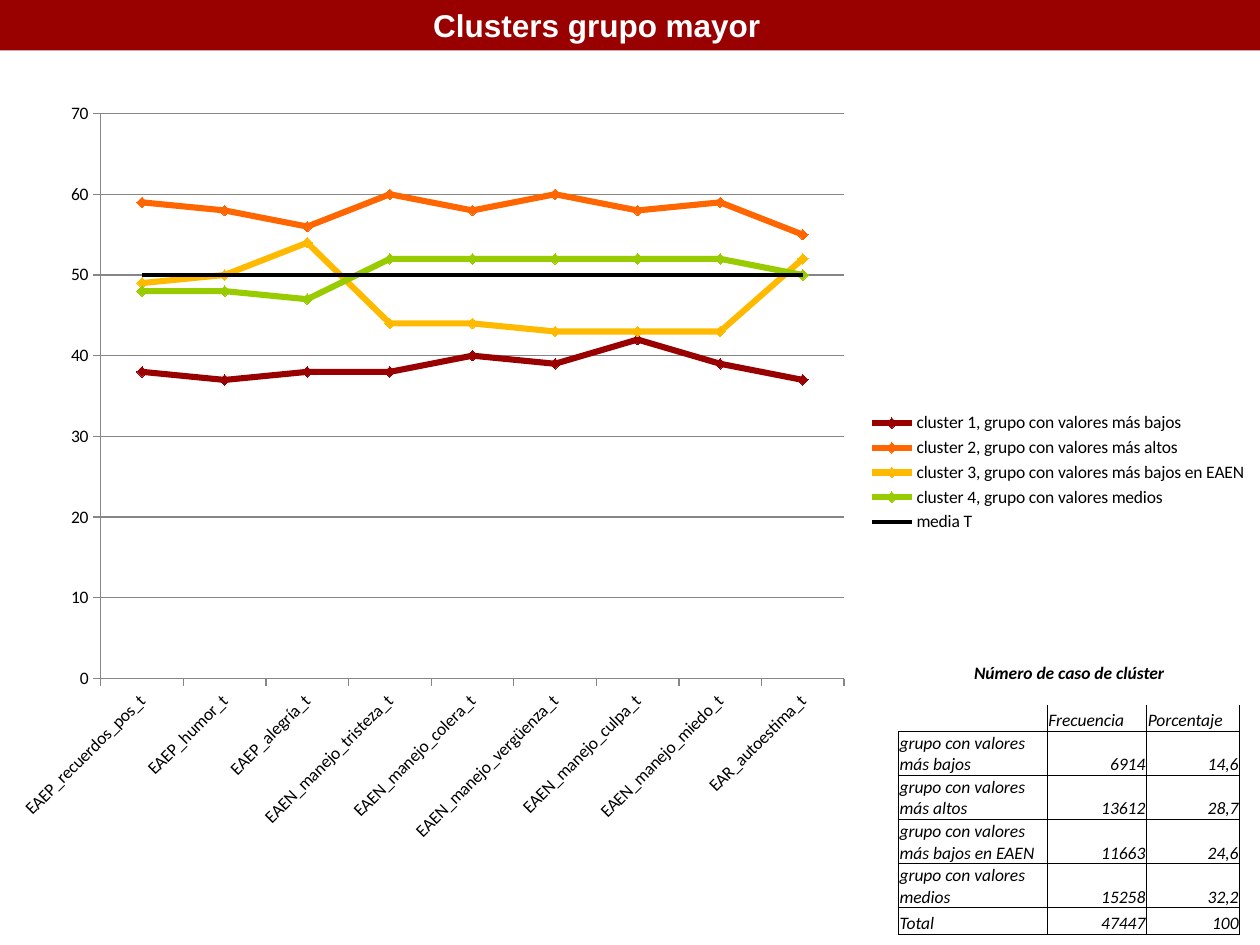
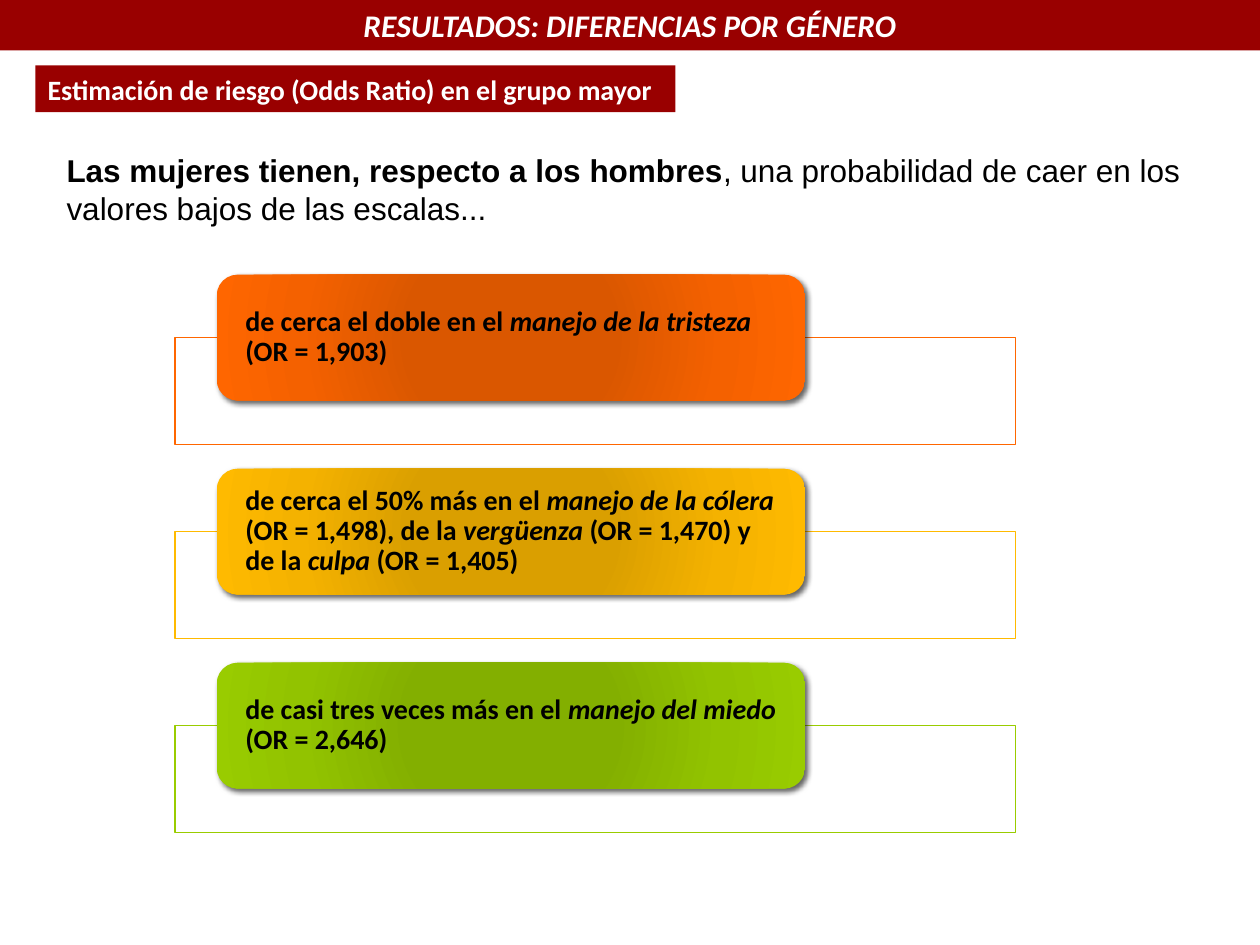
from dataclasses import dataclass
from lxml.etree import SubElement
from pptx import Presentation
from pptx.chart.data import CategoryChartData
from pptx.dml.color import RGBColor
from pptx.enum.chart import XL_CHART_TYPE, XL_LEGEND_POSITION, XL_MARKER_STYLE, XL_TICK_MARK
from pptx.enum.shapes import MSO_SHAPE
from pptx.enum.text import MSO_ANCHOR, PP_ALIGN
from pptx.oxml import parse_xml
from pptx.oxml.ns import nsdecls, qn
from pptx.util import Inches, Pt


@dataclass(frozen=True)
class Theme:
    red: str = "990000"
    orange: str = "FF6600"
    amber: str = "FFBA00"
    green: str = "99CC00"
    black: str = "000000"
    white: str = "FFFFFF"
    grey: str = "868686"
    body: str = "Calibri"
    heading: str = "Arial"
    title_size: int = 18
    card_size: int = 16
    small_size: int = 10


THEME = Theme()
COLUMNS = 100  # the grid has 100 columns and 75 rows of square cells

CATEGORIES = ["EAEP_recuerdos_pos_t", "EAEP_humor_t", "EAEP_alegría_t",
              "EAEN_manejo_tristeza_t", "EAEN_manejo_colera_t",
              "EAEN_manejo_vergüenza_t", "EAEN_manejo_culpa_t",
              "EAEN_manejo_miedo_t", "EAR_autoestima_t"]
CLUSTERS = [
    ("cluster 1, grupo con valores más bajos", THEME.red,
     [38, 37, 38, 38, 40, 39, 42, 39, 37]),
    ("cluster 2, grupo con valores más altos", THEME.orange,
     [59, 58, 56, 60, 58, 60, 58, 59, 55]),
    ("cluster 3, grupo con valores más bajos en EAEN", THEME.amber,
     [49, 50, 54, 44, 44, 43, 43, 43, 52]),
    ("cluster 4, grupo con valores medios", THEME.green,
     [48, 48, 47, 52, 52, 52, 52, 52, 50]),
]
MEAN = ("media T", THEME.black, [50] * len(CATEGORIES))

FREQUENCIES = [
    ("Número de caso de clúster", "", ""),
    ("", "Frecuencia", "Porcentaje"),
    ("grupo con valores más bajos", "6914", "14,6"),
    ("grupo con valores más altos", "13612", "28,7"),
    ("grupo con valores más bajos en EAEN", "11663", "24,6"),
    ("grupo con valores medios", "15258", "32,2"),
    ("Total", "47447", "100"),
]

# Each card: colour, its two darker shades, text runs as (text, italic)
CARDS = [
    (THEME.orange, "DA5700", "F46100", [
        ("de cerca el doble en el ", False), ("manejo de la tristeza ", True),
        ("(OR = 1,903)", False)]),
    (THEME.amber, "DA9F00", "F4B200", [
        ("de cerca el 50% más en el ", False), ("manejo de la cólera ", True),
        ("(OR = 1,498), de la ", False), ("vergüenza", True),
        (" (OR = 1,470) y de la ", False), ("culpa", True),
        (" (OR = 1,405)", False)]),
    (THEME.green, "83AF00", "92C300", [
        ("de casi tres veces más en el ", False), ("manejo del miedo ", True),
        ("(OR = 2,646)", False)]),
]


def rgb(colour):
    return RGBColor.from_string(colour)


class Deck:
    """Holds the style and the current slide, and draws each kind of element."""

    def __init__(self, theme):
        self.theme = theme
        self.presentation = Presentation()
        self.presentation.slide_width = Inches(10)
        self.presentation.slide_height = Inches(7.5)
        self.cell = self.presentation.slide_width / COLUMNS
        self.slide = None

    def grid(self, *cells):
        return [round(count * self.cell) for count in cells]

    def style_font(self, font, size, colour, face=None, bold=False, italic=False):
        font.size, font.name = Pt(size), face or self.theme.body
        font.bold, font.italic = bold, italic
        font.color.rgb = rgb(colour)

    def add_runs(self, frame, runs, size, colour, face=None, align=PP_ALIGN.LEFT):
        """Fill a text frame from runs of (text, bold, italic)."""
        paragraph = frame.paragraphs[0]
        paragraph.alignment = align
        for text, bold, italic in runs:
            run = paragraph.add_run()
            run.text = text
            self.style_font(run.font, size, colour, face, bold, italic)
        return paragraph

    def new_slide(self):
        self.slide = self.presentation.slides.add_slide(self.presentation.slide_layouts[6])
        self.box(0, 0, COLUMNS, 4, fill=self.theme.red)

    def box(self, left, top, width, height, fill, line=None, kind=MSO_SHAPE.RECTANGLE):
        shape = self.slide.shapes.add_shape(kind, *self.grid(left, top, width, height))
        shape.shadow.inherit = False
        shape.fill.solid()
        shape.fill.fore_color.rgb = rgb(fill)
        if line:
            shape.line.color.rgb = rgb(line)
            shape.line.width = Pt(0.75)
        else:
            shape.line.fill.background()
        return shape

    def text(self, left, top, width, height, runs, colour, face=None, align=PP_ALIGN.LEFT):
        box = self.slide.shapes.add_textbox(*self.grid(left, top, width, height))
        box.text_frame.word_wrap = True
        self.add_runs(box.text_frame, runs, self.theme.title_size, colour, face, align)

    def title(self, left, width, runs, face=None, align=PP_ALIGN.LEFT):
        self.text(left, 0, width, 4, runs, self.theme.white, face, align)

    def label(self, left, top, width, height, text):
        shape = self.box(left, top, width, height, self.theme.red)
        self.add_runs(shape.text_frame, [(text, True, False)],
                      self.theme.card_size, self.theme.white)

    def card(self, left, top, width, height, colour, dark, middle, runs):
        shape = self.box(left, top, width, height, colour, kind=MSO_SHAPE.ROUNDED_RECTANGLE)
        properties = shape._element.spPr
        # Round gradient from the dark centre to the plain colour
        stops = "".join(
            f'<a:gs pos="{share * 1000}"><a:srgbClr val="{shade}"/></a:gs>'
            for share, shade in [(0, dark), (34, dark), (70, middle), (100, colour)])
        gradient = parse_xml(
            f'<a:gradFill {nsdecls("a")} rotWithShape="1"><a:gsLst>{stops}</a:gsLst>'
            '<a:path path="circle"><a:fillToRect l="100000" t="100000" r="100000" b="100000"/>'
            '</a:path></a:gradFill>')
        properties.replace(properties.find(qn("a:solidFill")), gradient)
        # Soft shadow to the lower right
        properties.find(qn("a:effectLst")).append(parse_xml(
            f'<a:outerShdw {nsdecls("a")} blurRad="{Pt(3)}" dist="{Pt(2)}" dir="2700000" '
            'algn="tl" rotWithShape="0"><a:srgbClr val="000000"><a:alpha val="60000"/>'
            '</a:srgbClr></a:outerShdw>'))
        frame = shape.text_frame
        frame.word_wrap = True
        frame.vertical_anchor = MSO_ANCHOR.MIDDLE
        frame.margin_left = frame.margin_right = Inches(0.18)
        frame.margin_top = frame.margin_bottom = 0
        paragraph = self.add_runs(frame, [(text, True, italic) for text, italic in runs],
                                  self.theme.card_size, self.theme.black)
        paragraph.line_spacing = 0.9

    def line_chart(self, left, top, width, height, categories, clusters, mean):
        data = CategoryChartData()
        data.categories = categories
        for name, _, values in [*clusters, mean]:
            data.add_series(name, values)
        chart = self.slide.shapes.add_chart(
            XL_CHART_TYPE.LINE_MARKERS, *self.grid(left, top, width, height), data).chart
        self.style_font(chart.font, self.theme.small_size, self.theme.black)
        chart.has_title = False
        chart.has_legend = True
        chart.legend.position = XL_LEGEND_POSITION.RIGHT
        chart.legend.include_in_layout = False
        # Axes
        scale = chart.value_axis
        scale.minimum_scale, scale.maximum_scale, scale.major_unit = 0, 70, 10
        scale.has_major_gridlines = True
        for axis in (scale, chart.category_axis):
            axis.major_tick_mark = XL_TICK_MARK.OUTSIDE
            self.style_font(axis.tick_labels.font, self.theme.small_size, self.theme.black)
        for line in (scale.format.line, scale.major_gridlines.format.line,
                     chart.category_axis.format.line):
            line.color.rgb = rgb(self.theme.grey)
            line.width = Pt(0.75)
        chart.category_axis._element.find(qn("c:txPr")).find(qn("a:bodyPr")).set("rot", "-2700000")
        # Lines and markers
        for series, (name, colour, _) in zip(chart.plots[0].series, [*clusters, mean]):
            series.smooth = False
            series.format.line.color.rgb = rgb(colour)
            if name == mean[0]:
                series.format.line.width = Pt(2.25)
                series.marker.style = XL_MARKER_STYLE.NONE
                continue
            series.format.line.width = Pt(3.5)
            series.marker.style, series.marker.size = XL_MARKER_STYLE.DIAMOND, 6
            series.marker.format.fill.solid()
            series.marker.format.fill.fore_color.rgb = rgb(colour)
            series.marker.format.line.color.rgb = rgb(colour)
        # Plot area as shares of the chart
        area = chart._chartSpace.chart.plotArea
        for layout in area.findall(qn("c:layout")):
            area.remove(layout)
        shares = "".join(f'<c:{key} val="{value}"/>' for key, value in [
            ("layoutTarget", "inner"), ("xMode", "edge"), ("yMode", "edge"),
            ("x", 0.08), ("y", 0.03), ("w", 0.59), ("h", 0.74)])
        area.insert(0, parse_xml(
            f'<c:layout {nsdecls("c")}><c:manualLayout>{shares}</c:manualLayout></c:layout>'))

    def borders(self, cell, sides):
        properties = cell._tc.get_or_add_tcPr()
        for position, side in enumerate("LRTB"):
            paint = (f'<a:solidFill><a:srgbClr val="{self.theme.black}"/></a:solidFill>'
                     if side in sides else "<a:noFill/>")
            properties.insert(position, parse_xml(
                f'<a:ln{side} {nsdecls("a")} w="{Pt(0.5)}">{paint}</a:ln{side}>'))

    def table(self, left, top, widths, heights, rows):
        table = self.slide.shapes.add_table(
            len(rows), len(widths),
            *self.grid(left, top, sum(widths), sum(heights))).table
        table.first_row = table.horz_banding = False
        for column, width in zip(table.columns, self.grid(*widths)):
            column.width = width
        for row, height in zip(table.rows, self.grid(*heights)):
            row.height = height
        table.cell(0, 0).merge(table.cell(0, len(widths) - 1))
        for row_index, row in enumerate(rows):
            for column_index, text in enumerate(row):
                cell = table.cell(row_index, column_index)
                caption = row_index == 0
                cell.margin_left = cell.margin_right = cell.margin_top = Inches(0.01)
                cell.margin_bottom = 0
                cell.vertical_anchor = MSO_ANCHOR.TOP if caption else MSO_ANCHOR.BOTTOM
                cell.fill.background()
                if caption:
                    align, sides = PP_ALIGN.CENTER, ""
                elif row_index == 1:
                    align, sides = PP_ALIGN.LEFT, "LRB" if column_index else "RB"
                else:
                    align, sides = PP_ALIGN.RIGHT if column_index else PP_ALIGN.LEFT, "LRTB"
                self.borders(cell, sides)
                if text:
                    self.add_runs(cell.text_frame, [(text, caption, True)],
                                  self.theme.small_size, self.theme.black, align=align)
                else:
                    # An empty cell keeps the small type, so its row stays low
                    SubElement(cell.text_frame.paragraphs[0]._p, qn("a:endParaRPr"),
                               sz=str(self.theme.small_size * 100))


def build_clusters(deck):
    deck.new_slide()
    deck.line_chart(0, 7.2, COLUMNS, 60.6, CATEGORIES, CLUSTERS, MEAN)
    deck.table(71.3, 52.5, [11.8, 7.9, 7.4], [3.45, 2.1] + [3.5] * 4 + [2.1], FREQUENCIES)
    deck.title(33.4, 28.3, [("Clusters grupo mayor", True, False)], deck.theme.heading)


def build_gender(deck):
    deck.new_slide()
    deck.title(0, COLUMNS, [("RESULTADOS: DIFERENCIAS POR GÉNERO", True, True)],
               align=PP_ALIGN.CENTER)
    deck.label(2.8, 5.2, 50.8, 3.7, "Estimación de riesgo (Odds Ratio) en el grupo mayor")
    deck.text(4.3, 11.5, 90.6, 7.1, [
        ("Las mujeres tienen, respecto a los hombres", True, False),
        (", una probabilidad de caer en los valores bajos de las escalas...", False, False),
    ], deck.theme.black, deck.theme.heading)
    # Three cards at equal steps, each over its outlined panel
    for index, (colour, dark, middle, runs) in enumerate(CARDS):
        top = 21.8 + index * 15.4
        deck.box(13.9, top + 5, 66.7, 8.5, deck.theme.white, line=colour)
        deck.card(17.2, top, 46.7, 10, colour, dark, middle, runs)


def main():
    deck = Deck(THEME)
    build_clusters(deck)
    build_gender(deck)
    deck.presentation.save("out.pptx")


if __name__ == "__main__":
    main()
